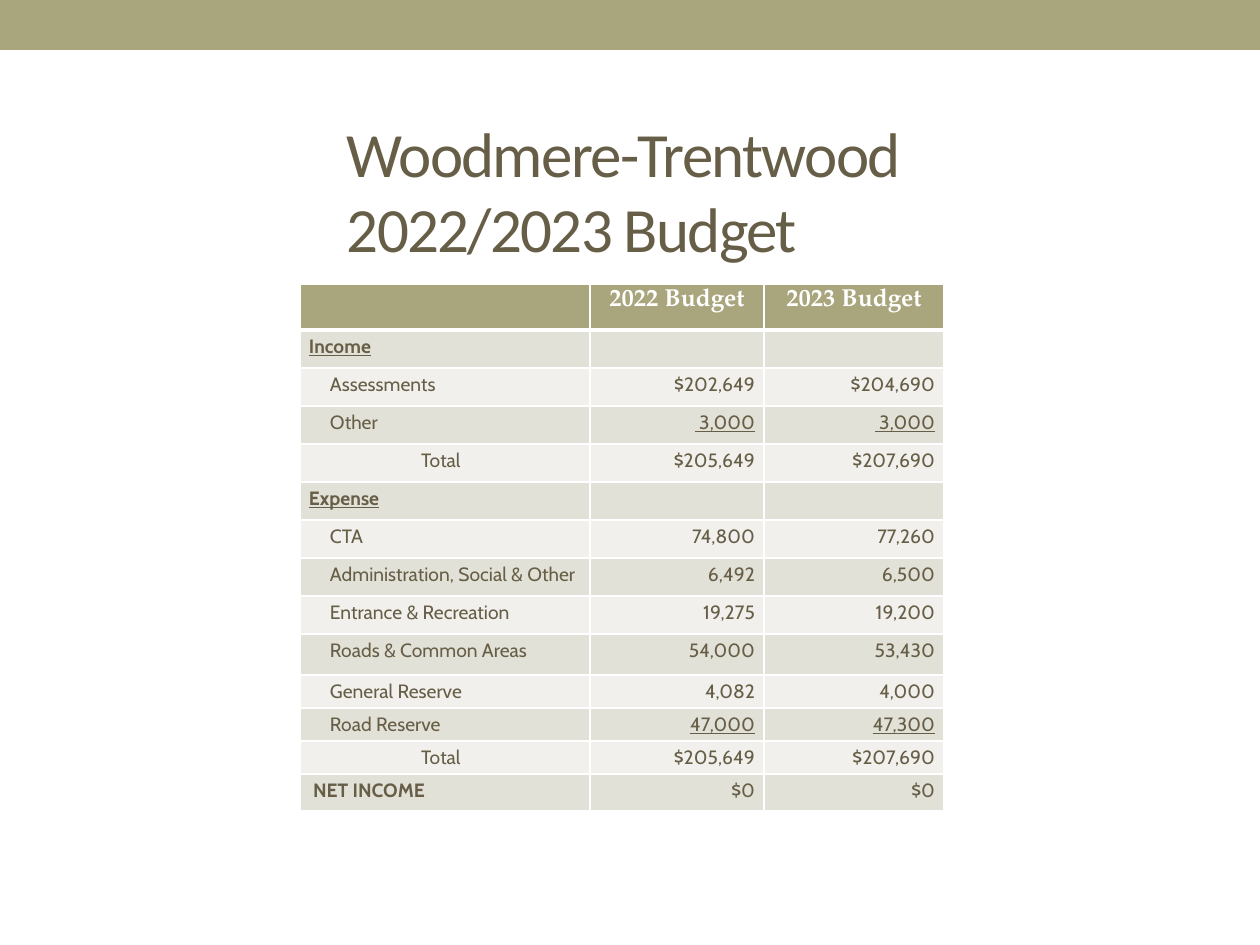
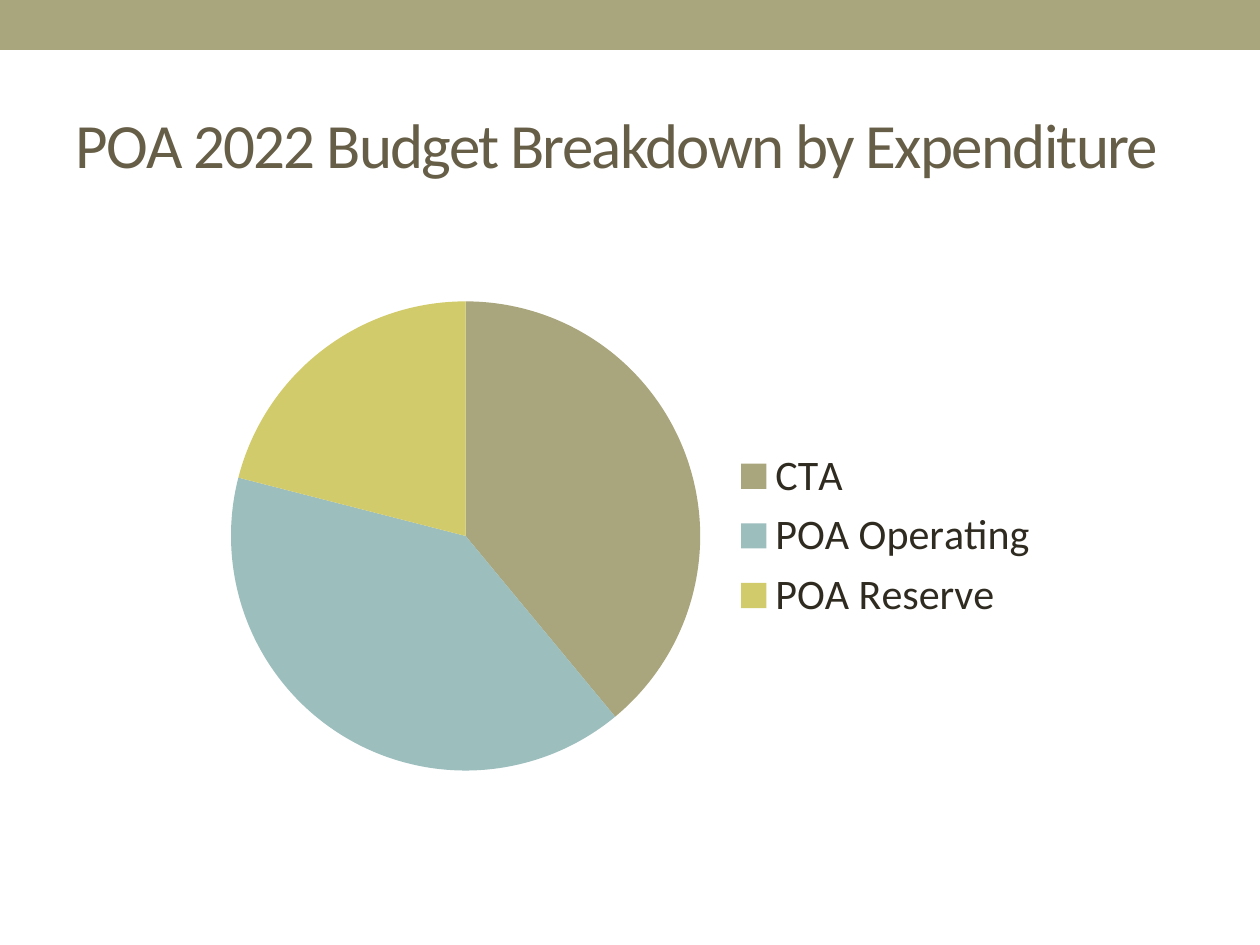
import pptx
import pptx.chart.data
import pptx.dml.color
import pptx.enum.chart
import pptx.enum.shapes
import pptx.enum.text
import pptx.oxml
import pptx.oxml.ns
import pptx.util
from lxml import etree

COLORS = {
    "olive": "A9A57C", "teal": "9CBEBD", "yellow": "D2CB6C",
    "brown": "675E47", "dark": "2F2B20", "white": "FFFFFF",
    "row_dark": "E2E1D7", "row_light": "F1F0EC",
}
ALIGN = pptx.enum.text.PP_ALIGN
qn = pptx.oxml.ns.qn


def px(count):
    return pptx.util.Emu(round(count * 914400 / 126))


def style_font(font, color, **values):
    font.color.rgb = pptx.dml.color.RGBColor.from_string(COLORS[color])
    for name, value in values.items():
        setattr(font, name, value)


presentation = pptx.Presentation()
presentation.slide_width, presentation.slide_height = px(1260), px(945)

# Shared band and title on each slide: text, box, left inset
titles = [
    ("Woodmere-Trentwood\v2022/2023 Budget", (197, 113, 850, 154), 150),
    ("POA 2022 Budget Breakdown by Expenditure", (63, 75, 1134, 136), 13),
]
slides = []
for text, box, inset in titles:
    slide = presentation.slides.add_slide(presentation.slide_layouts[6])
    slides.append(slide)
    band = slide.shapes.add_shape(
        pptx.enum.shapes.MSO_SHAPE.RECTANGLE, 0, 0, px(1260), px(50))
    band.shadow.inherit = False
    band.fill.solid()
    band.fill.fore_color.rgb = pptx.dml.color.RGBColor.from_string(COLORS["olive"])
    band.line.fill.background()

    title = slide.shapes.add_textbox(*map(px, box))
    frame_format = {
        "word_wrap": True,
        "vertical_anchor": pptx.enum.text.MSO_ANCHOR.MIDDLE,
        "margin_left": px(inset), "margin_right": 0,
        "margin_top": 0, "margin_bottom": 0,
    }
    for name, value in frame_format.items():
        setattr(title.text_frame, name, value)
    paragraph = title.text_frame.paragraphs[0]
    paragraph.text = text
    for run in paragraph.runs:
        style_font(run.font, "brown", name="Calibri", size=pptx.util.Pt(36))
        run.font._element.set("spc", "-100")

budget_slide, chart_slide = slides

# Budget table: label, 2022, 2023, label indent
ITEM, TOTAL = 21, 112
budget_rows = [
    ("", "2022 Budget", "2023 Budget", 0),
    ("Income", "", "", 0),
    ("Assessments", "$202,649", "$204,690", ITEM),
    ("Other", " 3,000", " 3,000", ITEM),
    ("Total", "$205,649", "$207,690", TOTAL),
    ("Expense", "", "", 0),
    ("CTA", "74,800", "77,260", ITEM),
    ("Administration, Social & Other", "6,492", "6,500", ITEM),
    ("Entrance & Recreation", "19,275", "19,200", ITEM),
    ("Roads & Common Areas", "54,000", "53,430", ITEM),
    ("General Reserve", "4,082", "4,000", ITEM),
    ("Road Reserve", "47,000", "47,300", ITEM),
    ("Total", "$205,649", "$207,690", TOTAL),
    ("NET INCOME", "$0", "$0", 4),
]
row_heights = [46] + [38] * 8 + [41, 33, 33, 33, 37]
column_widths = [290, 174, 180]
headings = ("Income", "Expense")
before_total = ("Other", "Road Reserve")

table = budget_slide.shapes.add_table(
    len(row_heights), len(column_widths), px(300), px(284),
    px(sum(column_widths)), px(sum(row_heights))).table
for column, width in zip(table.columns, column_widths):
    column.width = px(width)
for row, height in zip(table.rows, row_heights):
    row.height = px(height)

cell_margins = {"margin_left": 9, "margin_right": 9, "margin_top": 5, "margin_bottom": 5}
for row_index, (*texts, indent) in enumerate(budget_rows):
    is_header = row_index == 0
    label = texts[0]
    fill = "olive" if is_header else ("row_light", "row_dark")[row_index % 2]
    for column_index, text in enumerate(texts):
        cell = table.cell(row_index, column_index)
        is_label = column_index == 0
        for name, value in cell_margins.items():
            setattr(cell, name, px(value))

        # White borders, thicker between header and body
        properties = cell._tc.get_or_add_tcPr()
        for side in "LRTB":
            thick = (side == "B" and is_header) or (side == "T" and row_index == 1)
            line = etree.SubElement(properties, qn(f"a:ln{side}"), w=str(pptx.util.Pt(3 if thick else 1)))
            solid = etree.SubElement(line, qn("a:solidFill"))
            etree.SubElement(solid, qn("a:srgbClr"), val=COLORS["white"])
        cell.fill.solid()
        cell.fill.fore_color.rgb = pptx.dml.color.RGBColor.from_string(COLORS[fill])

        paragraph = cell.text_frame.paragraphs[0]
        if not text:
            etree.SubElement(paragraph._p, qn("a:endParaRPr"), sz="1100")
            continue
        run = paragraph.add_run()
        run.text = text
        if is_header:
            paragraph.alignment = ALIGN.CENTER
            style_font(run.font, "white", name="TeX Gyre Pagella",
                       size=pptx.util.Pt(14), bold=True)
            continue
        paragraph.alignment = ALIGN.LEFT if is_label else ALIGN.RIGHT
        if is_label:
            paragraph._p.get_or_add_pPr().set("marL", str(px(indent)))
        style_font(run.font, "brown", name="Cabin", size=pptx.util.Pt(11),
                   bold=is_label and label in headings + ("NET INCOME",),
                   underline=label in (headings if is_label else before_total))

# Pie chart of expenditure
chart_data = pptx.chart.data.CategoryChartData()
chart_data.categories = ["CTA", "POA Operating", "POA Reserve"]
chart_data.add_series("Dues", (39, 40, 21))
chart = chart_slide.shapes.add_chart(
    pptx.enum.chart.XL_CHART_TYPE.PIE, px(204), px(284), px(850), px(504),
    chart_data).chart
chart.has_title = False
style_font(chart.font, "dark", name="Calibri", size=pptx.util.Pt(10))
chart.has_legend = True
chart.legend.position = pptx.enum.chart.XL_LEGEND_POSITION.RIGHT
chart.legend.include_in_layout = False
style_font(chart.legend.font, "dark", name="Calibri", size=pptx.util.Pt(24))
pie = chart.plots[0]
pie.vary_by_categories = True
for index, color in enumerate(("olive", "teal", "yellow")):
    slice_format = pie.series[0].points[index].format
    slice_format.fill.solid()
    slice_format.fill.fore_color.rgb = pptx.dml.color.RGBColor.from_string(COLORS[color])
    slice_format.line.fill.background()

presentation.save("out.pptx")
